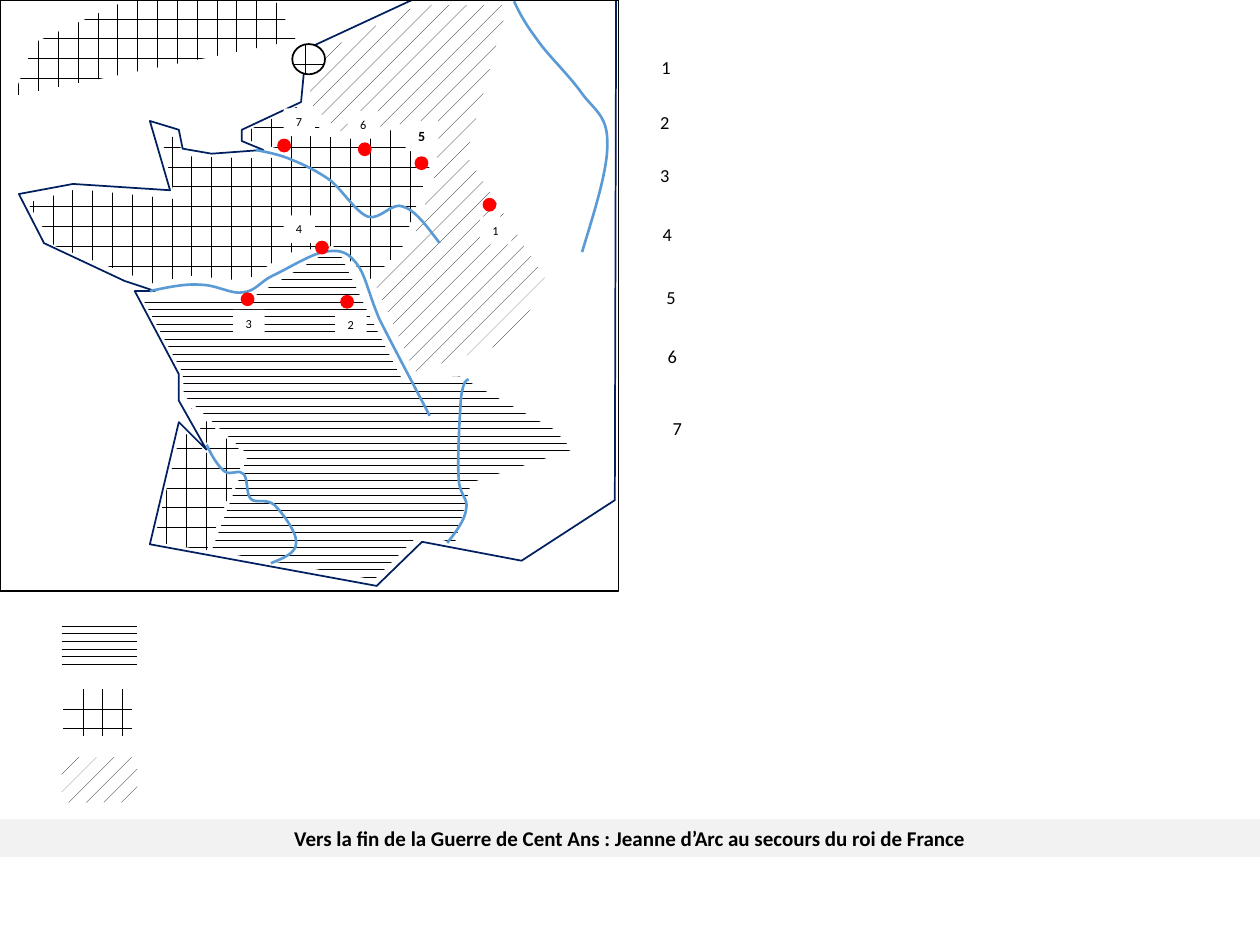
from lxml import etree
from pptx import Presentation
from pptx.dml.color import RGBColor
from pptx.enum.dml import MSO_PATTERN
from pptx.enum.shapes import MSO_SHAPE
from pptx.enum.text import MSO_ANCHOR, MSO_AUTO_SIZE, PP_ALIGN
from pptx.oxml.ns import qn
from pptx.util import Inches, Pt

RECT, OVAL = MSO_SHAPE.RECTANGLE, MSO_SHAPE.OVAL
FIT, FIXED = MSO_AUTO_SIZE.SHAPE_TO_FIT_TEXT, MSO_AUTO_SIZE.NONE
MIDDLE, CENTER = MSO_ANCHOR.MIDDLE, PP_ALIGN.CENTER
ROWS = MSO_PATTERN.DASHED_HORIZONTAL
GRID = MSO_PATTERN.DOTTED_GRID
DOTS = MSO_PATTERN.PERCENT_5

COLORS = {"ink": "000000", "paper": "FFFFFF", "coast": "002060",
          "river": "5B9BD5", "town": "FF0000", "band": "F2F2F2"}

# Map outlines, in inches from the map's top left corner
ZONES = [
    (GRID, [(1.22, 4.3), (1.44, 3.41), (1.7, 3.65), (1.52, 3.24), (1.95, 3.61),
            (1.64, 4.37)]),
    (DOTS, [(2.45, 0.88), (2.48, 0.45), (3.32, 0.04), (4.03, 0.04), (3.7, 1.23),
            (4.34, 2.23), (4.06, 2.71), (3.29, 2.95), (2.98, 2.26), (3.24, 2.02),
            (3.48, 1.31), (3.42, 0.96), (2.69, 1.04), (2.45, 0.81)]),
    (ROWS, [(1.12, 2.35), (1.97, 2.38), (2.53, 2.04), (2.71, 2.04), (2.93, 2.5),
            (3.19, 3.01), (3.65, 2.99), (4.4, 3.41), (4.54, 3.57), (3.74, 3.83),
            (3.61, 4.31), (3.33, 4.24), (2.97, 4.6), (1.68, 4.37), (1.97, 3.61),
            (1.46, 3.14), (1.45, 2.96)]),
    (GRID, [(2.35, 0.85), (2.62, 1.09), (2.85, 1.05), (3.19, 1.03), (3.35, 1.04),
            (3.41, 1.32), (3.19, 1.97), (2.95, 2.22), (2.64, 1.95), (2.27, 2.01),
            (1.95, 2.23), (1.43, 2.18), (1.27, 2.27), (0.43, 1.95), (0.22, 1.61),
            (0.61, 1.5), (1.39, 1.58), (1.27, 1.03), (1.41, 1.11), (1.46, 1.24),
            (2.14, 1.26), (2.28, 1.2), (1.96, 1.11), (1.96, 1.04)]),
    (GRID, [(0.11, 0.76), (2.35, 0.32), (2.18, -0.01), (1.01, 0), (0.27, 0.34)]),
]
COAST = [(3.27, 0), (2.43, 0.39), (2.39, 0.81), (1.92, 1.03), (1.92, 1.12),
         (2.09, 1.19), (1.68, 1.22), (1.45, 1.18), (1.42, 1.03), (1.19, 0.96),
         (1.35, 1.51), (0.58, 1.46), (0.15, 1.54), (0.35, 1.93), (0.99, 2.23),
         (1.23, 2.31), (1.07, 2.31), (1.42, 2.97), (1.42, 3.18), (1.64, 3.57),
         (1.42, 3.35), (1.19, 4.32), (2.99, 4.65), (3.35, 4.3), (4.14, 4.45),
         (4.88, 3.97), (4.89, 0)]
# Start, then two control points and an end for each curve
RIVERS = [
    [(3.49, 1.93), (3.39, 1.8), (3.3, 1.67), (3.2, 1.64), (3.11, 1.6),
     (3.02, 1.75), (2.92, 1.72), (2.82, 1.68), (2.72, 1.51), (2.62, 1.43),
     (2.52, 1.36), (2.42, 1.31), (2.32, 1.27), (2.23, 1.23), (2.13, 1.21),
     (2.03, 1.19)],
    [(3.41, 3.3), (3.26, 3.01), (3.11, 2.73), (3.01, 2.53), (2.92, 2.32),
     (2.9, 2.17), (2.82, 2.08), (2.75, 1.99), (2.68, 1.98), (2.57, 2),
     (2.46, 2.02), (2.27, 2.14), (2.16, 2.19), (2.06, 2.24), (2.03, 2.31),
     (1.93, 2.32), (1.84, 2.34), (1.72, 2.26), (1.59, 2.26), (1.47, 2.25),
     (1.33, 2.28), (1.19, 2.31)],
    [(2.15, 4.47), (2.25, 4.43), (2.35, 4.39), (2.35, 4.31), (2.36, 4.23),
     (2.24, 4.07), (2.18, 4.01), (2.11, 3.95), (2.03, 4), (1.99, 3.96),
     (1.95, 3.92), (1.97, 3.79), (1.93, 3.76), (1.9, 3.72), (1.83, 3.78),
     (1.78, 3.74), (1.73, 3.7), (1.68, 3.62), (1.64, 3.53)],
    [(3.72, 3.01), (3.7, 3.02), (3.68, 3.02), (3.66, 3.15), (3.65, 3.28),
     (3.63, 3.64), (3.64, 3.78), (3.64, 3.93), (3.72, 3.95), (3.7, 4.04),
     (3.69, 4.13), (3.62, 4.22), (3.55, 4.31)],
    [(4.62, 2), (4.72, 1.67), (4.83, 1.33), (4.82, 1.12), (4.82, 0.91),
     (4.7, 0.86), (4.61, 0.73), (4.51, 0.59), (4.34, 0.43), (4.26, 0.31),
     (4.17, 0.19), (4.12, 0.1), (4.08, 0.01)],
]
# Town number: left and top of its dot, then of its label
TOWNS = {1: (3.83, 1.57, 3.81, 1.72), 2: (2.7, 2.34, 2.66, 2.47),
         3: (1.91, 2.32, 1.85, 2.46), 4: (2.5, 1.91, 2.25, 1.71),
         5: (3.29, 1.24, 3.22, 0.96), 6: (2.84, 1.13, 2.76, 0.88),
         7: (2.2, 1.1, 2.25, 0.86)}
# Left and top of each number in the list beside the map
NOTES = [(0.01, 0), (0, 0.43), (0, 0.85), (0.02, 1.32), (0.05, 1.82),
         (0.06, 2.29), (0.1, 2.86)]
KEYS = [(ROWS, 0, 0, 0.6, 0.38), (GRID, 0.01, 0.56, 0.55, 0.37),
        (DOTS, 0, 1.1, 0.6, 0.36)]


def rgb(name):
    return RGBColor.from_string(COLORS[name])


def paint(shape, fill=None, line=None, width=1):
    """Fill with a colour name or a pattern, and outline with a colour name."""
    shape.shadow.inherit = False
    if fill is None:
        shape.fill.background()
    elif fill in COLORS:
        shape.fill.solid()
        shape.fill.fore_color.rgb = rgb(fill)
    else:
        shape.fill.patterned()
        shape.fill.pattern = fill
        shape.fill.fore_color.rgb = rgb("ink")
        shape.fill.back_color.rgb = rgb("paper")
    if line is None:
        shape.line.fill.background()
    else:
        shape.line.color.rgb = rgb(line)
        shape.line.width = Pt(width)


def add_form(slide, kind, box, **look):
    paint(slide.shapes.add_shape(kind, *map(Inches, box)), **look)


def trace(slide, left, top, points, close=True, **look):
    spots = [(Inches(left + x), Inches(top + y)) for x, y in points]
    pen = slide.shapes.build_freeform(*spots[0])
    pen.add_line_segments(spots[1:], close=close)
    shape = pen.convert_to_shape()
    paint(shape, **look)
    return shape


def bend(shape):
    """Turn each three straight steps of the outline into one cubic curve."""
    steps = list(shape.element.iter(qn("a:lnTo")))
    for i in range(0, len(steps), 3):
        curve = etree.Element(qn("a:cubicBezTo"))
        steps[i].addprevious(curve)
        for step in steps[i:i + 3]:
            curve.append(step[0])
            step.getparent().remove(step)


def style(font, size, bold=False):
    look = {"name": "Calibri", "size": Pt(size), "bold": bold}
    for key, value in look.items():
        setattr(font, key, value)
    font.color.rgb = rgb("ink")


def add_label(slide, text, box, size, bold=False, fill=None):
    shape = slide.shapes.add_textbox(*map(Inches, box))
    if fill:
        paint(shape, fill)
    frame = shape.text_frame
    frame.text = text
    frame.word_wrap = False
    frame.auto_size = FIT
    style(frame.paragraphs[0].runs[0].font, size, bold)


def draw_map(slide, left, top, width, height):
    for fill, points in ZONES:
        trace(slide, left, top, points, fill=fill)
    trace(slide, left, top, COAST, line="coast")
    for points in RIVERS:
        bend(trace(slide, left, top, points, close=False, line="river", width=1.5))
    for x, y, _, _ in TOWNS.values():
        add_form(slide, OVAL, (left + x, top + y, 0.11, 0.11), fill="town")
    for num, (_, _, x, y) in TOWNS.items():
        main = num == 5
        side, size = ((0.26, 0.24), 8) if main else ((0.25, 0.22), 7)
        add_label(slide, str(num), (left + x, top + y, *side), size, main, "paper")
    add_form(slide, OVAL, (left + 2.32, top + 0.35, 0.26, 0.24), fill=GRID, line="ink")
    add_form(slide, RECT, (left, top, width, height), line="ink")


def draw_notes(slide, left, top):
    for num, (x, y) in enumerate(NOTES, 1):
        add_label(slide, str(num), (left + x, top + y, 0.28, 0.29), 10.5)


def draw_key(slide, left, top):
    for fill, x, y, width, height in KEYS:
        add_form(slide, RECT, (left + x, top + y, width, height), fill=fill)


def set_title(slide, text, box):
    title = slide.shapes.title
    for side, value in zip(("left", "top", "width", "height"), box):
        setattr(title, side, Inches(value))
    title.fill.solid()
    title.fill.fore_color.rgb = rgb("band")
    frame = title.text_frame
    frame.text = text
    look = {"auto_size": FIXED, "vertical_anchor": MIDDLE, "word_wrap": True}
    for key, value in look.items():
        setattr(frame, key, value)
    frame.paragraphs[0].alignment = CENTER
    style(frame.paragraphs[0].runs[0].font, 12, True)


def main():
    deck = Presentation()
    deck.slide_width, deck.slide_height = Inches(10), Inches(7.5)
    slide = deck.slides.add_slide(deck.slide_layouts[5])
    draw_map(slide, 0, 0, 4.91, 4.69)
    draw_notes(slide, 5.14, 0.4)
    draw_key(slide, 0.49, 4.91)
    set_title(slide, "Vers la fin de la Guerre de Cent Ans : Jeanne d’Arc "
              "au secours du roi de France", (0, 6.5, 10, 0.3))
    deck.save("out.pptx")


if __name__ == "__main__":
    main()
